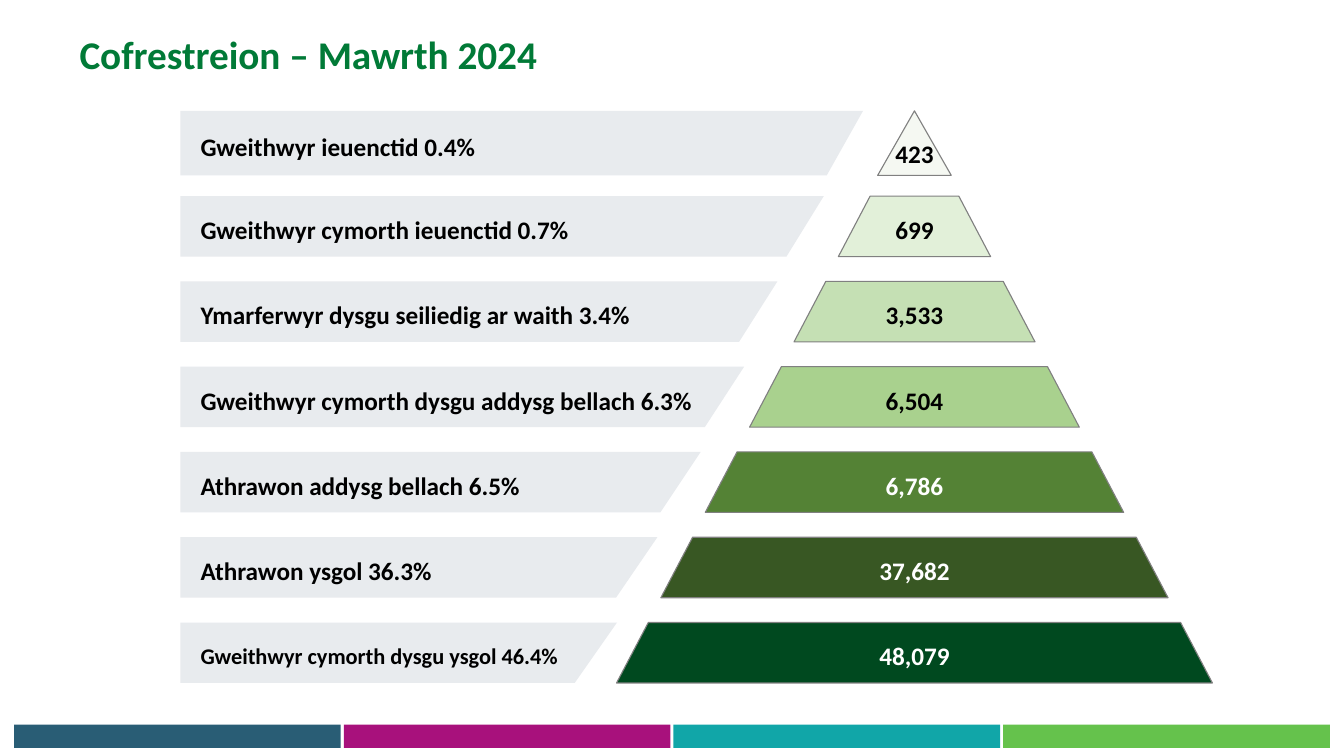
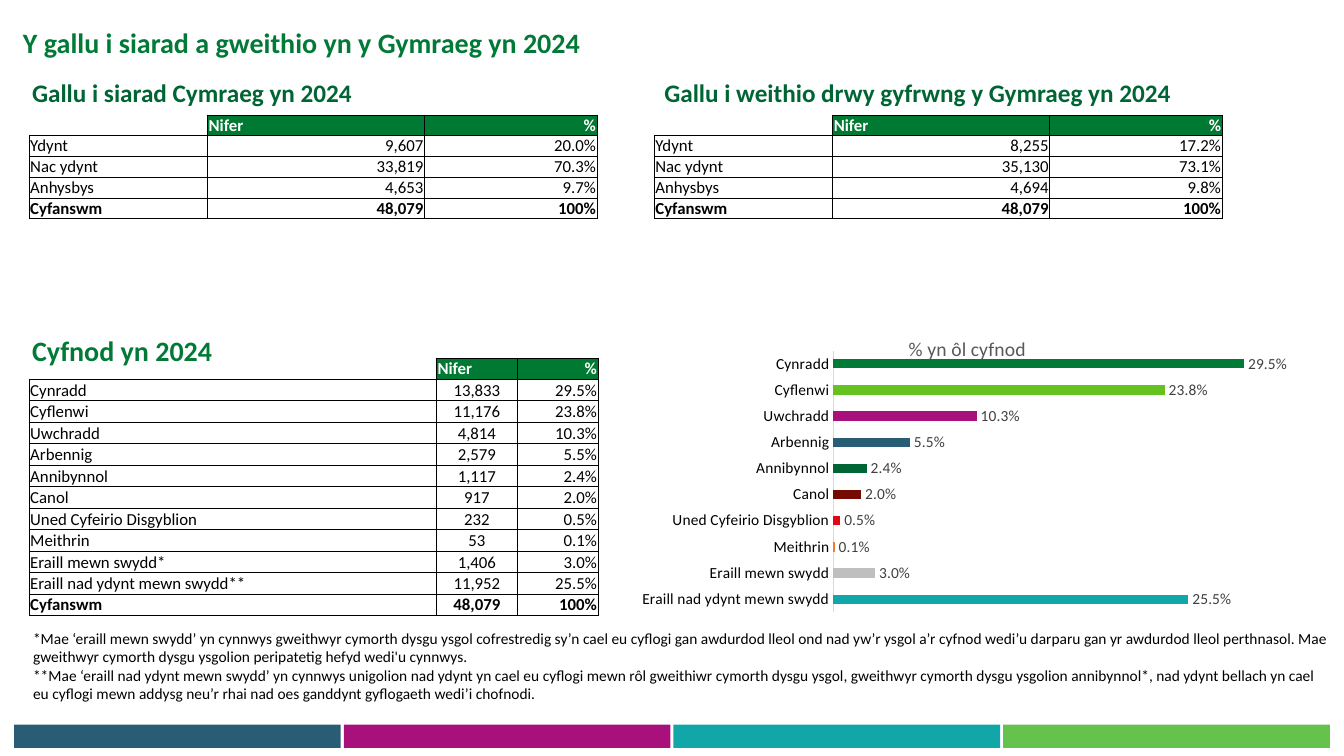
"""Build two slides on registrants and their use of Welsh, March 2024."""
from lxml.etree import SubElement
from pptx import Presentation
from pptx.chart.data import CategoryChartData
from pptx.dml.color import RGBColor
from pptx.enum.chart import XL_CHART_TYPE, XL_LABEL_POSITION, XL_TICK_MARK
from pptx.enum.shapes import MSO_SHAPE
from pptx.enum.text import MSO_ANCHOR, PP_ALIGN
from pptx.oxml.ns import qn
from pptx.util import Inches, Pt

CELL = Inches(0.1)
FONT = "Calibri"
BLACK = RGBColor(0x00, 0x00, 0x00)
WHITE = RGBColor(0xFF, 0xFF, 0xFF)
TITLE_GREEN = RGBColor(0x01, 0x7A, 0x37)
HEADER_GREEN = RGBColor(0x00, 0x7A, 0x33)
DARK_GREEN = RGBColor(0x00, 0x65, 0x34)
BLUE = RGBColor(0x29, 0x5D, 0x75)
MAGENTA = RGBColor(0xA8, 0x11, 0x7C)
TEAL = RGBColor(0x11, 0xA6, 0xA8)
LIME = RGBColor(0x65, 0xC2, 0x4C)
BRIGHT_LIME = RGBColor(0x65, 0xC2, 0x1F)
MAROON = RGBColor(0x75, 0x0A, 0x00)
RED = RGBColor(0xE3, 0x06, 0x13)
ORANGE = RGBColor(0xED, 0x7D, 0x31)
SILVER = RGBColor(0xBF, 0xBF, 0xBF)
LABEL_GREY = RGBColor(0xE8, 0xEB, 0xEE)
OUTLINE_GREY = RGBColor(0x80, 0x80, 0x80)
AXIS_GREY = RGBColor(0xD9, 0xD9, 0xD9)
CHART_TITLE_GREY = RGBColor(0x59, 0x59, 0x59)
CHART_LABEL_GREY = RGBColor(0x40, 0x40, 0x40)

FOOTER_COLORS = (BLUE, MAGENTA, TEAL, LIME)
NO_TABLE_STYLE = "{2D5ABB26-0587-4C30-8999-92F81FD0307C}"

PYRAMID = (
    ("Gweithwyr ieuenctid 0.4%", "423", 85.6, RGBColor(0xF5, 0xF8, 0xF2), BLACK),
    ("Gweithwyr cymorth ieuenctid 0.7%", "699", 81.7, RGBColor(0xE2, 0xF0, 0xD9), BLACK),
    ("Ymarferwyr dysgu seiliedig ar waith 3.4%", "3,533", 77.1, RGBColor(0xC5, 0xE0, 0xB4), BLACK),
    ("Gweithwyr cymorth dysgu addysg bellach 6.3%", "6,504", 73.8, RGBColor(0xA9, 0xD1, 0x8E), BLACK),
    ("Athrawon addysg bellach 6.5%", "6,786", 69.5, RGBColor(0x54, 0x82, 0x35), WHITE),
    ("Athrawon ysgol 36.3%", "37,682", 65.2, RGBColor(0x38, 0x57, 0x23), WHITE),
    ("Gweithwyr cymorth dysgu ysgol 46.4%", "48,079", 61.2, RGBColor(0x00, 0x49, 0x1F), WHITE),
)
HEADER = ("", "Nifer", "%")
TOTAL = ("Cyfanswm", "48,079", "100%")
SPEAKING = (
    HEADER,
    ("Ydynt", "9,607", "20.0%"),
    ("Nac ydynt", "33,819", "70.3%"),
    ("Anhysbys", "4,653", "9.7%"),
    TOTAL,
)
WORKING = (
    HEADER,
    ("Ydynt", "8,255", "17.2%"),
    ("Nac ydynt", "35,130", "73.1%"),
    ("Anhysbys", "4,694", "9.8%"),
    TOTAL,
)
PHASES = (
    ("Cynradd", "13,833", 0.295, TITLE_GREEN),
    ("Cyflenwi", "11,176", 0.238, BRIGHT_LIME),
    ("Uwchradd", "4,814", 0.103, MAGENTA),
    ("Arbennig", "2,579", 0.055, BLUE),
    ("Annibynnol", "1,117", 0.024, DARK_GREEN),
    ("Canol", "917", 0.02, MAROON),
    ("Uned Cyfeirio Disgyblion", "232", 0.005, RED),
    ("Meithrin", "53", 0.001, ORANGE),
    ("Eraill mewn swydd", "1,406", 0.03, SILVER),
    ("Eraill nad ydynt mewn swydd", "11,952", 0.255, TEAL),
)
FOOTNOTE_MARKS = {"Eraill mewn swydd": "*", "Eraill nad ydynt mewn swydd": "**"}
FOOTNOTES = (
    "*Mae ‘eraill mewn swydd’ yn cynnwys gweithwyr cymorth dysgu ysgol cofrestredig sy’n cael eu "
    "cyflogi gan awdurdod lleol ond nad yw’r ysgol a’r cyfnod wedi’u darparu gan yr awdurdod lleol "
    "perthnasol. Mae gweithwyr cymorth dysgu ysgolion peripatetig hefyd wedi'u cynnwys.",
    "**Mae ‘eraill nad ydynt mewn swydd’ yn cynnwys unigolion nad ydynt yn cael eu cyflogi mewn rôl "
    "gweithiwr cymorth dysgu ysgol, gweithwyr cymorth dysgu ysgolion annibynnol*, nad ydynt bellach "
    "yn cael eu cyflogi mewn addysg neu’r rhai nad oes ganddynt gyflogaeth wedi’i chofnodi.",
)


def grid(*cells):
    """Turn grid columns or rows into lengths."""
    return [round(cell * CELL) for cell in cells]


def style_font(font, size, color, bold=False):
    """Set typeface, size, colour and weight."""
    font.name = FONT
    font.size = Pt(size)
    font.color.rgb = color
    font.bold = bold


def write(paragraph, text, size, color, bold=False, alignment=PP_ALIGN.LEFT):
    """Fill a paragraph with evenly styled text."""
    paragraph.text = text
    paragraph.alignment = alignment
    style_font(paragraph.font, size, color, bold)


def add_text(slide, box, texts, size, color, bold=False, spacing=1.0):
    """Add a wrapping text box with one paragraph for each text."""
    frame = slide.shapes.add_textbox(*grid(*box)).text_frame
    frame.word_wrap = True
    for index, text in enumerate(texts):
        paragraph = frame.add_paragraph() if index else frame.paragraphs[0]
        write(paragraph, text, size, color, bold)
        paragraph.line_spacing = spacing


def add_title(slide, box, text, size):
    """Add a green heading."""
    add_text(slide, box, [text], size, TITLE_GREEN, True, 0.9)


def new_slide(presentation):
    """Add a blank slide with the coloured footer bands."""
    slide = presentation.slides.add_slide(presentation.slide_layouts[6])
    for index, color in enumerate(FOOTER_COLORS):
        band = slide.shapes.add_shape(MSO_SHAPE.RECTANGLE, *grid(1.4 + 32.7 * index, 71.9, 32.4, 2.3))
        band.shadow.inherit = False
        band.fill.solid()
        band.fill.fore_color.rgb = color
        band.line.fill.background()
    return slide


def add_polygon(slide, points, fill, text, size, color, alignment):
    """Add a closed outline with bold text in the middle."""
    start, *others = [tuple(grid(*point)) for point in points]
    builder = slide.shapes.build_freeform(*start)
    builder.add_line_segments(others)
    shape = builder.convert_to_shape()
    shape.shadow.inherit = False
    shape.fill.solid()
    shape.fill.fore_color.rgb = fill
    shape.line.fill.background()
    frame = shape.text_frame
    frame.word_wrap = True
    frame.vertical_anchor = MSO_ANCHOR.MIDDLE
    frame.margin_left = frame.margin_right = frame.margin_bottom = 0
    frame.margin_top = Inches(0.04)
    write(frame.paragraphs[0], text, size, color, True, alignment)
    frame.paragraphs[0].line_spacing = 1.07
    return shape


def add_pyramid(slide):
    """Stack the numbered bands with a slanted label beside each."""
    left, center = 17.9, 90.7
    last = len(PYRAMID) - 1
    for index, (label, number, right, fill, color) in enumerate(PYRAMID):
        top = 11 + 8.46 * index
        bottom = top + (6 if index else 6.4)
        slant = 3.6 + 0.1 * index
        label_points = [(left, top), (right, top), (right - slant, bottom), (left, bottom)]
        label_shape = add_polygon(slide, label_points, LABEL_GREY, label,
                                  16 if index == last else 18, BLACK, PP_ALIGN.LEFT)
        label_shape.text_frame.margin_left = Inches(0.2)
        half = 3.15 + 4.4 * index if index else 3.65
        shoulder = half - 3.15 if index else 0
        band_points = [(center - shoulder, top), (center + shoulder, top),
                       (center + half, bottom), (center - half, bottom)]
        band = add_polygon(slide, band_points, fill, number, 18, color, PP_ALIGN.CENTER)
        band.line.color.rgb = OUTLINE_GREY
        band.line.width = Pt(0.79)
        if index == 0:
            band.text_frame.vertical_anchor = MSO_ANCHOR.BOTTOM
            band.text_frame.margin_bottom = Inches(0.07)


def set_borders(cell, hidden=()):
    """Draw thin black cell borders except on the hidden sides."""
    properties = cell._tc.get_or_add_tcPr()
    for side in ("lnL", "lnR", "lnT", "lnB"):
        line = SubElement(properties, qn(f"a:{side}"), w=str(Pt(0.5)))
        if side in hidden:
            SubElement(line, qn("a:noFill"))
        else:
            fill = SubElement(line, qn("a:solidFill"))
            SubElement(fill, qn("a:srgbClr"), val=str(BLACK))


def add_table(slide, left, top, widths, row_height, rows, number_alignment):
    """Add a table with a green header, a bold total and an open corner."""
    box = grid(left, top, sum(widths), row_height * len(rows))
    table = slide.shapes.add_table(len(rows), len(widths), *box).table
    table.first_row = table.horz_banding = False
    table._tbl.tblPr.find(qn("a:tableStyleId")).text = NO_TABLE_STYLE
    for column, width in zip(table.columns, grid(*widths)):
        column.width = width
    alignments = (PP_ALIGN.LEFT, number_alignment, PP_ALIGN.RIGHT)
    for row_index, texts in enumerate(rows):
        table.rows[row_index].height = grid(row_height)[0]
        is_header = row_index == 0
        is_bold = is_header or row_index == len(rows) - 1
        for column_index, text in enumerate(texts):
            cell = table.cell(row_index, column_index)
            is_corner = is_header and column_index == 0
            set_borders(cell, ("lnL", "lnT") if is_corner else ())
            cell.vertical_anchor = MSO_ANCHOR.BOTTOM
            cell.margin_left = cell.margin_right = Inches(0.01)
            cell.margin_top = cell.margin_bottom = 0
            paragraph = cell.text_frame.paragraphs[0]
            if is_corner:
                paragraph._p.get_or_add_endParaRPr().set("sz", "1200")
            else:
                alignment = PP_ALIGN.LEFT if text == "Nifer" else alignments[column_index]
                write(paragraph, text, 12, WHITE if is_header else BLACK, is_bold, alignment)
            if is_header and not is_corner:
                cell.fill.solid()
                cell.fill.fore_color.rgb = HEADER_GREEN
            else:
                cell.fill.background()


def set_layout(parent, position, **values):
    """Give a chart part a manual layout."""
    for layout in parent.findall(qn("c:layout")):
        parent.remove(layout)
    layout = parent.makeelement(qn("c:layout"))
    parent.insert(position, layout)
    manual = SubElement(layout, qn("c:manualLayout"))
    for name, value in values.items():
        SubElement(manual, qn(f"c:{name}"), val=str(value))


def add_phase_chart(slide):
    """Add the bar chart of shares by phase."""
    data = CategoryChartData(number_format="0.0%")
    data.categories = [name for name, *_ in PHASES]
    data.add_series("Series 1", [share for _, _, share, _ in PHASES])
    chart = slide.shapes.add_chart(XL_CHART_TYPE.BAR_CLUSTERED, *grid(59.9, 31.4, 71.1, 30.9), data).chart
    style_font(chart.font, 10, BLACK)
    chart.has_legend = False
    chart.has_title = True
    write(chart.chart_title.text_frame.paragraphs[0], "% yn ôl cyfnod", 14, CHART_TITLE_GREY,
          alignment=PP_ALIGN.CENTER)
    set_layout(chart.chart_title._element, 1, xMode="edge", yMode="edge", x=0.42, y=0.05)
    set_layout(chart._chartSpace.chart.plotArea, 0, layoutTarget="inner", xMode="edge", yMode="edge",
               x=0.32, y=0.11, w=0.68, h=0.84)
    category_axis = chart.category_axis
    category_axis.reverse_order = True
    category_axis.major_tick_mark = XL_TICK_MARK.NONE
    category_axis.format.line.color.rgb = AXIS_GREY
    category_axis.format.line.width = Pt(0.75)
    style_font(category_axis.tick_labels.font, 11, BLACK)
    value_axis = chart.value_axis
    value_axis.visible = value_axis.has_major_gridlines = False
    value_axis.minimum_scale, value_axis.maximum_scale = 0, 0.35
    plot = chart.plots[0]
    plot.gap_width = 182
    plot.vary_by_categories = False
    plot.has_data_labels = True
    labels = plot.data_labels
    labels.show_value = True
    labels.position = XL_LABEL_POSITION.OUTSIDE_END
    labels.number_format = "0.0%"
    labels.number_format_is_linked = False
    style_font(labels.font, 11, CHART_LABEL_GREY)
    for index, (*_, color) in enumerate(PHASES):
        fill = plot.series[0].points[index].format.fill
        fill.solid()
        fill.fore_color.rgb = color


def add_welsh_slide(presentation):
    """Add the slide of tables and chart on Welsh ability and phase."""
    slide = new_slide(presentation)
    add_title(slide, (1.3, 2.4, 70.3, 5.5), "Y gallu i siarad a gweithio yn y Gymraeg yn 2024", 20)
    abilities = (
        (2.2, 2.9, "Gallu i siarad Cymraeg yn 2024", SPEAKING),
        (64.9, 64.9, "Gallu i weithio drwy gyfrwng y Gymraeg yn 2024", WORKING),
    )
    for heading_left, table_left, heading, rows in abilities:
        add_text(slide, (heading_left, 7.2, 54.2, 4), [heading], 18, DARK_GREEN, True)
        add_table(slide, table_left, 11.4, (17.7, 21.5, 17.1), 2.06, rows, PP_ALIGN.RIGHT)
    add_title(slide, (2.2, 33, 25.8, 5.5), "Cyfnod yn 2024", 20)
    phase_rows = [(name + FOOTNOTE_MARKS.get(name, ""), number, f"{share:.1%}")
                  for name, number, share, _ in PHASES]
    add_table(slide, 2.9, 35.5, (40.4, 8, 8), 2.13, [HEADER, *phase_rows, TOTAL], PP_ALIGN.CENTER)
    add_phase_chart(slide)
    add_text(slide, (2.3, 61.9, 131, 8.4), FOOTNOTES, 11, BLACK)


def main():
    """Build and save the presentation."""
    presentation = Presentation()
    presentation.slide_width, presentation.slide_height = Inches(13.33), Inches(7.5)
    slide = new_slide(presentation)
    add_title(slide, (6.9, 3, 57.9, 6.7), "Cofrestreion – Mawrth 2024", 28)
    add_pyramid(slide)
    add_welsh_slide(presentation)
    presentation.save("out.pptx")


if __name__ == "__main__":
    main()
